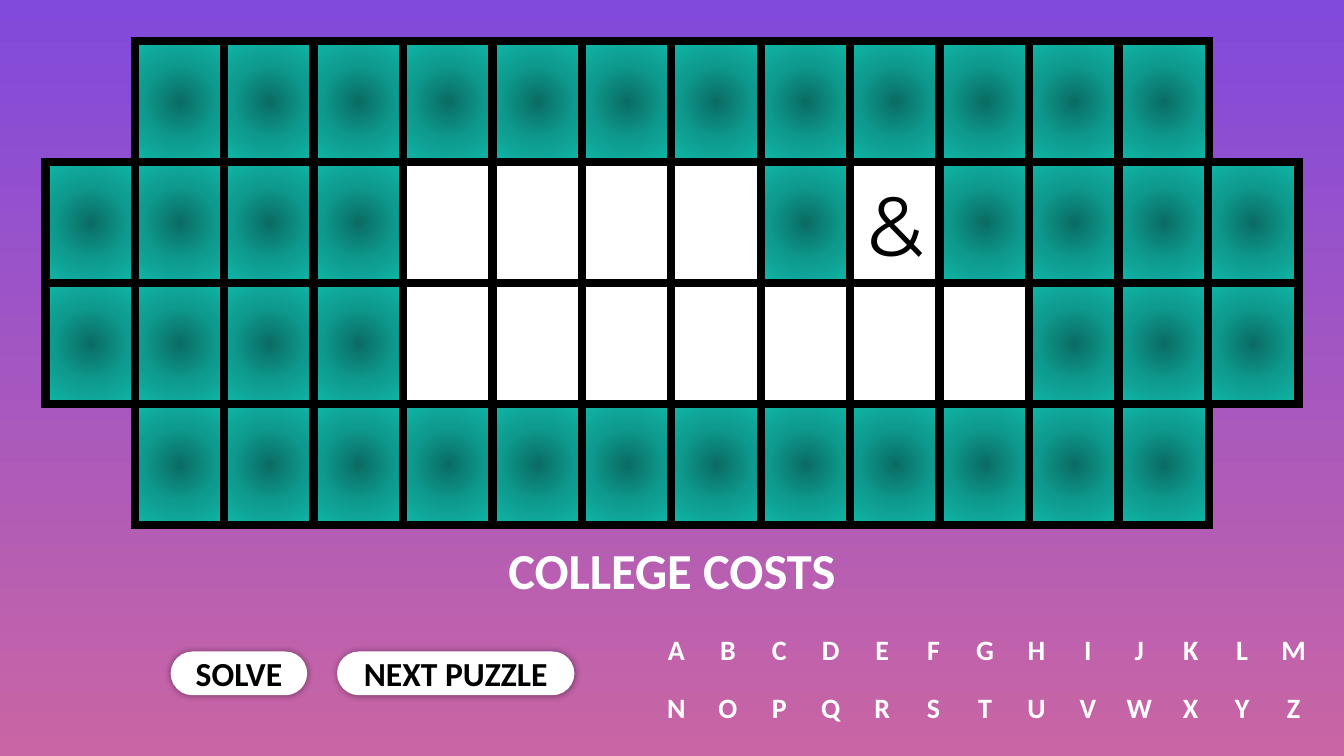
from pptx import Presentation
from pptx.dml.color import RGBColor as RGB
from pptx.enum.shapes import MSO_SHAPE as Shape
from pptx.enum.text import MSO_ANCHOR as Anchor, PP_ALIGN as Align
from pptx.oxml import parse_xml
from pptx.oxml.ns import nsdecls, qn
from pptx.util import Inches, Pt

COLORS = {
    "top": "8149DC", "base": "C965A4",
    "core": "0A6C63", "mid": "0E9A8E", "rim": "10B7A8",
    "white": "FFFFFF", "black": "000000",
}
# T is a teal tile, _ an open tile, a space no tile
BOARD = [
    " TTTTTTTTTTTT ",
    "TTTT____T&TTTT",
    "TTTT_______TTT",
    " TTTTTTTTTTTT ",
]
LETTERS = ["ABCDEFGHIJKLM", "NOPQRSTUVWXYZ"]


def color(name):
    return RGB.from_string(COLORS[name])


def write(shape, text, size, tint, font="Calibri", bold=True):
    frame = shape.text_frame
    frame.word_wrap = True
    frame.vertical_anchor = Anchor.MIDDLE
    frame.margin_left = frame.margin_right = 0
    frame.margin_top = frame.margin_bottom = 0
    para = frame.paragraphs[0]
    para.text = text
    para.alignment = Align.CENTER
    para.font.size = Pt(size)
    para.font.name = font
    para.font.bold = bold
    para.font.color.rgb = color(tint)


def add_box(slide, kind, box, edge, width):
    shape = slide.shapes.add_shape(kind, *map(Inches, box))
    shape.shadow.inherit = False
    shape.fill.solid()
    shape.fill.fore_color.rgb = color("white")
    shape.line.color.rgb = color(edge)
    shape.line.width = Pt(width)
    return shape


def glow(shape):
    """Fill a tile with teal that darkens toward its centre."""
    stops = "".join(
        f'<a:gs pos="{pos}"><a:srgbClr val="{COLORS[name]}"/></a:gs>'
        for pos, name in [(0, "core"), (50000, "mid"), (100000, "rim")])
    grad = parse_xml(
        f'<a:gradFill {nsdecls("a")} rotWithShape="1"><a:gsLst>{stops}</a:gsLst>'
        '<a:path path="circle"><a:fillToRect l="50000" t="50000" r="50000" b="50000"/>'
        '</a:path></a:gradFill>')
    props = shape.element.spPr
    props.replace(props.find(qn("a:solidFill")), grad)


def add_back(slide):
    fill = slide.background.fill
    fill.gradient()
    fill.gradient_angle = 270
    for stop, name in zip(fill.gradient_stops, ["top", "base"]):
        stop.color.rgb = color(name)


def add_board(slide, left, top, width, height):
    tile_w, tile_h = 0.9, height / len(BOARD)
    step = (width - tile_w) / (len(BOARD[0]) - 1)
    for row, line in enumerate(BOARD):
        for col, mark in enumerate(line):
            if mark == " ":
                continue
            box = (left + col * step, top + row * tile_h, tile_w, tile_h)
            tile = add_box(slide, Shape.RECTANGLE, box, "black", 6)
            # Square corners on the thick frame
            tile.line._get_or_add_ln().append(
                parse_xml(f'<a:miter {nsdecls("a")} lim="800000"/>'))
            if mark == "T":
                glow(tile)
            elif mark != "_":
                write(tile, mark, 60, "black", "Montserrat", False)


def add_title(slide, left, top, width, height):
    title = slide.shapes.title
    title.left, title.top = Inches(left), Inches(top)
    title.width, title.height = Inches(width), Inches(height)
    write(title, "COLLEGE COSTS", 36, "white")


def add_keys(slide, left, top, width, height):
    key_w, key_h = 0.4, 0.62
    step = (width - key_w) / (len(LETTERS[0]) - 1)
    for row, line in enumerate(LETTERS):
        for col, letter in enumerate(line):
            key = slide.shapes.add_textbox(
                Inches(left + col * step), Inches(top + row * (height - key_h)),
                Inches(key_w), Inches(key_h))
            write(key, letter, 20, "white")


def add_button(slide, text, *box):
    button = add_box(slide, Shape.ROUNDED_RECTANGLE, box, "white", 1)
    button.adjustments[0] = 0.5
    write(button, text, 24, "black")
    # Soft shadow all round
    button.element.spPr.find(qn("a:effectLst")).append(parse_xml(
        f'<a:outerShdw {nsdecls("a")} blurRad="{Pt(5)}" dist="0" dir="0" algn="ctr" '
        f'rotWithShape="0"><a:srgbClr val="{COLORS["black"]}"><a:alpha val="40000"/>'
        '</a:srgbClr></a:outerShdw>'))


def main():
    deck = Presentation()
    deck.slide_width, deck.slide_height = Inches(13.33), Inches(7.5)
    slide = deck.slides.add_slide(deck.slide_layouts[5])
    add_back(slide)
    add_board(slide, 0.45, 0.41, 12.43, 4.8)
    add_title(slide, 0, 5.34, 13.33, 0.62)
    add_button(slide, "SOLVE", 1.7, 6.47, 1.34, 0.42)
    add_button(slide, "NEXT PUZZLE", 3.35, 6.47, 2.34, 0.42)
    add_keys(slide, 6.51, 6.13, 6.52, 1.2)
    deck.save("out.pptx")


if __name__ == "__main__":
    main()
